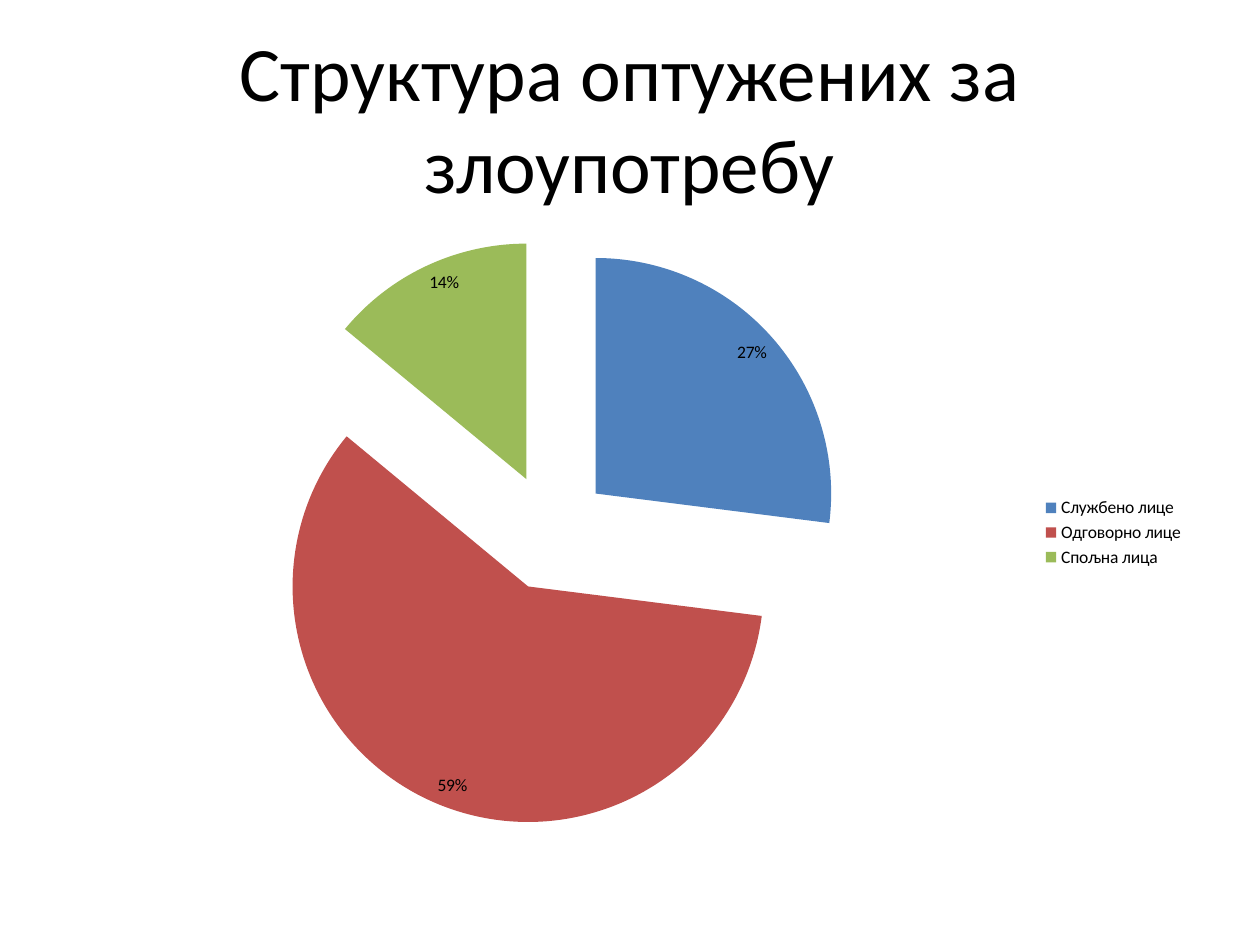
from pptx import Presentation
from pptx.chart.data import CategoryChartData
from pptx.dml.color import RGBColor
from pptx.enum.chart import XL_CHART_TYPE, XL_LABEL_POSITION, XL_LEGEND_POSITION
from pptx.enum.text import MSO_ANCHOR, PP_ALIGN
from pptx.util import Cm, Pt

BLACK = RGBColor(0x00, 0x00, 0x00)
BLUE = RGBColor(0x4F, 0x81, 0xBD)
RED = RGBColor(0xC0, 0x50, 0x4D)
GREEN = RGBColor(0x9B, 0xBB, 0x59)

FONT = "Calibri"
BURST = 25  # gap between slices, percent of the radius
SLICES = [
    ("Службено лице", 27, BLUE),
    ("Одговорно лице", 59, RED),
    ("Спољна лица", 14, GREEN),
]


def set_all(target, values):
    for name, value in values.items():
        setattr(target, name, value)


def set_font(font, size):
    set_all(font, {"name": FONT, "size": Pt(size)})
    font.color.rgb = BLACK


def add_title(slide, text, box):
    frame = slide.shapes.add_textbox(*box).text_frame
    set_all(frame, {"word_wrap": True, "vertical_anchor": MSO_ANCHOR.MIDDLE})
    line = frame.paragraphs[0]
    line.alignment = PP_ALIGN.CENTER
    run = line.add_run()
    run.text = text
    set_font(run.font, 44)


def add_pie(slide, slices, box):
    names, values, colors = zip(*slices)
    data = CategoryChartData()
    data.categories = names
    data.add_series("Series 1", values)
    chart = slide.shapes.add_chart(XL_CHART_TYPE.PIE_EXPLODED, *box, data).chart
    set_all(chart, {"has_title": False, "has_legend": True})
    set_font(chart.font, 10)
    set_all(chart.legend, {
        "position": XL_LEGEND_POSITION.RIGHT,
        "include_in_layout": False,
    })

    plot = chart.plots[0]
    set_all(plot, {"vary_by_categories": True, "has_data_labels": True})
    set_all(plot.data_labels, {
        "show_percentage": True,
        "show_value": False,
        "number_format": "0%",
        "number_format_is_linked": False,
        "position": XL_LABEL_POSITION.INSIDE_END,
    })
    series = plot.series[0]
    for burst in series._element.xpath("c:explosion"):
        burst.set("val", str(BURST))
    for index, color in enumerate(colors):
        fill = series.points[index].format.fill
        fill.solid()
        fill.fore_color.rgb = color


def main():
    deck = Presentation()
    set_all(deck, {"slide_width": Cm(25.4), "slide_height": Cm(19.05)})
    slide = deck.slides.add_slide(deck.slide_layouts[6])
    left, width = Cm(1.27), Cm(22.86)
    add_title(slide, "Структура оптужених за злоупотребу",
              (left, Cm(0.76), width, Cm(3.18)))
    add_pie(slide, SLICES, (left, Cm(4.45), width, Cm(12.57)))
    deck.save("out.pptx")


if __name__ == "__main__":
    main()
